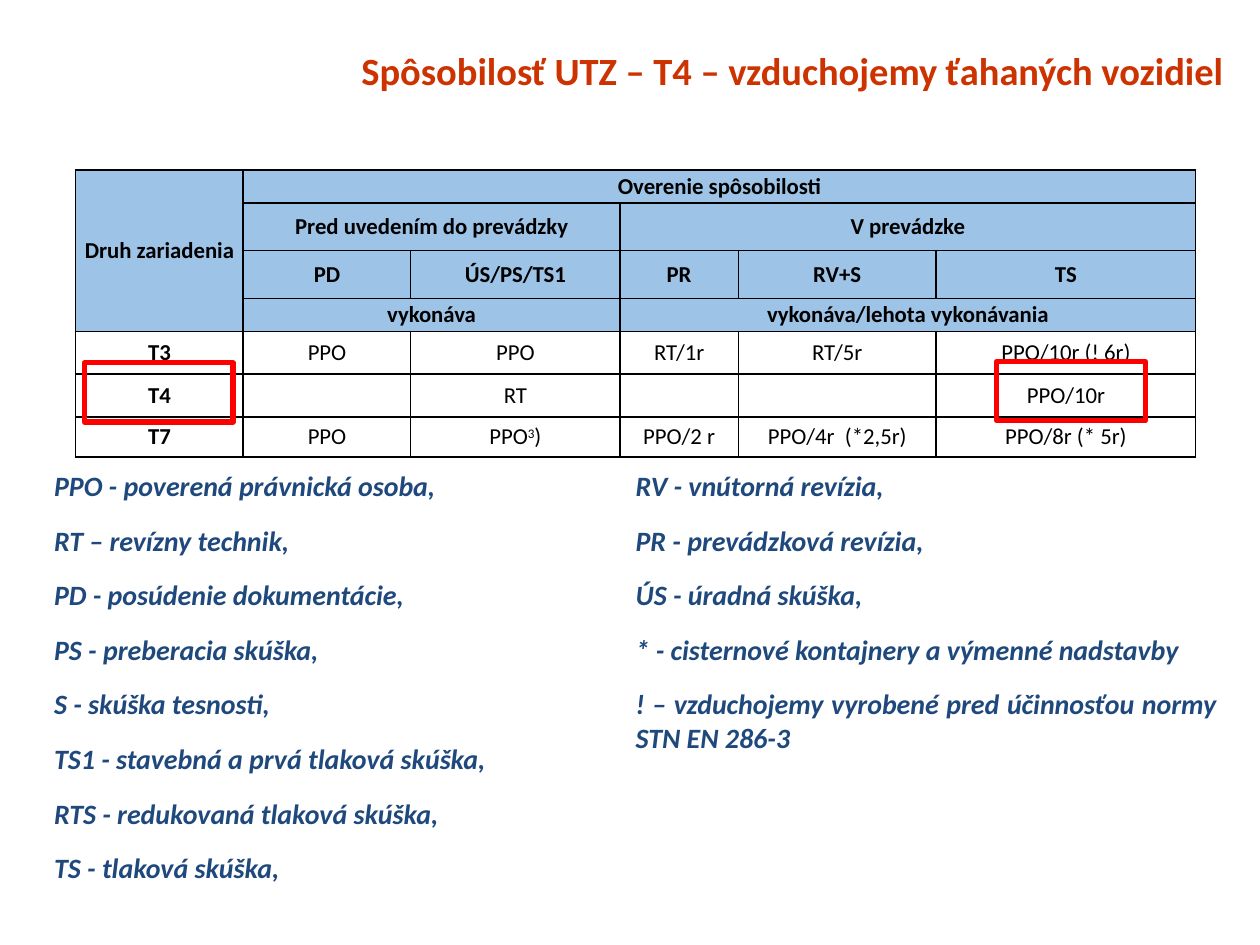
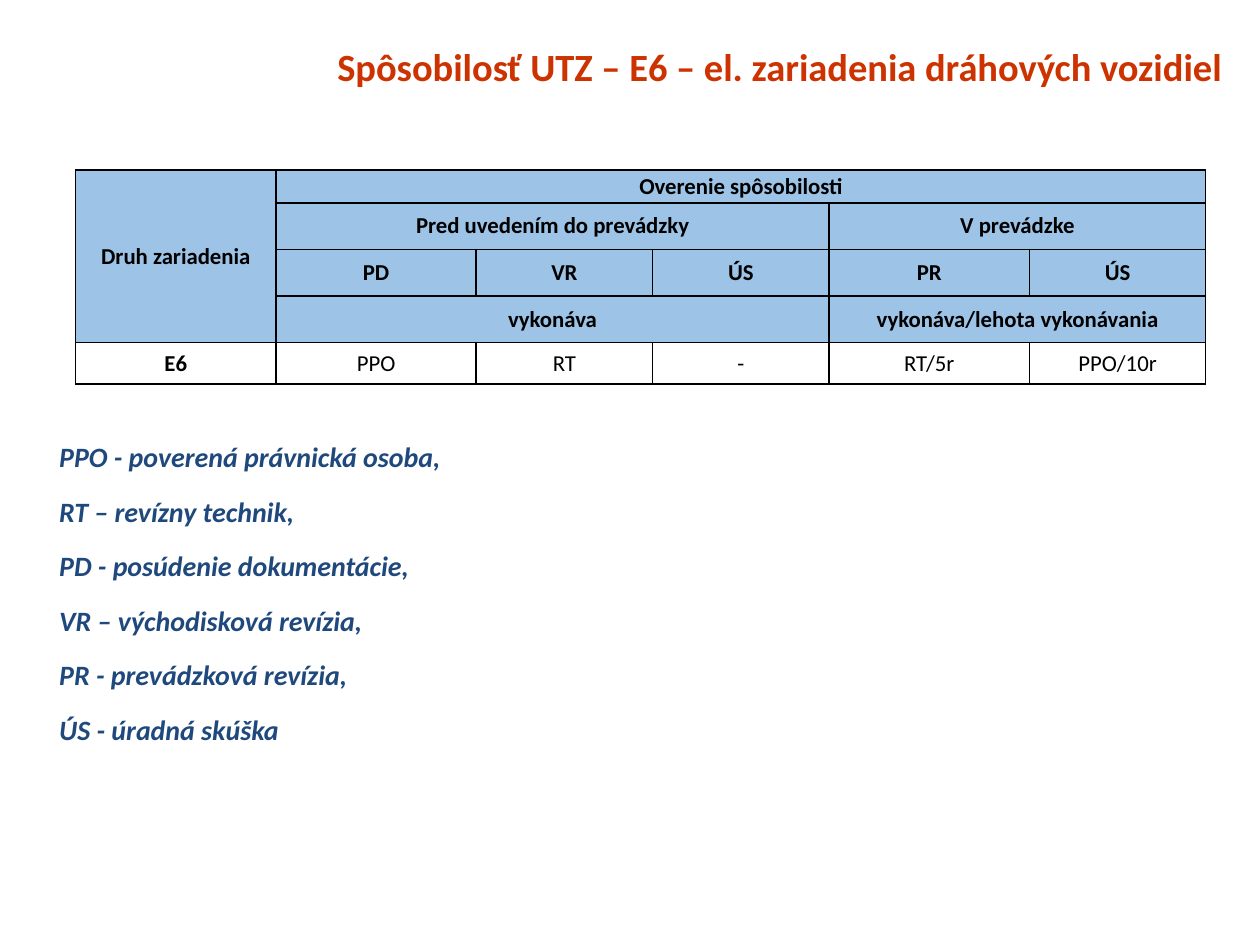
from lxml import etree
from pptx import Presentation
from pptx.dml.color import RGBColor
from pptx.enum.shapes import MSO_SHAPE
from pptx.enum.text import MSO_ANCHOR, MSO_AUTO_SIZE, PP_ALIGN
from pptx.oxml.ns import qn
from pptx.util import Inches, Pt

RECTANGLE = MSO_SHAPE.RECTANGLE
MIDDLE, TOP = MSO_ANCHOR.MIDDLE, MSO_ANCHOR.TOP
CENTER, RIGHT, JUSTIFY = PP_ALIGN.CENTER, PP_ALIGN.RIGHT, PP_ALIGN.JUSTIFY

FONT = "Calibri"
TITLE_RED = "CC3300"
LEGEND_BLUE = "1F497D"
HEADER_BLUE = "9DC3E6"
HIGHLIGHT_RED = "FF0000"
BLACK, WHITE = "000000", "FFFFFF"
TITLE_ONLY = 5
HEADER_ROWS = 4


def color(hex_value):
    return RGBColor.from_string(hex_value)


def write(frame, lines, size, hex_color, align, bold=False, italic=False,
          anchor=TOP, insets=(0.1, 0.05, 0.1, 0.05), space_after=0):
    """Fill a text frame or cell frame; text between ^ marks is superscript."""
    frame.word_wrap = True
    frame.vertical_anchor = anchor
    (frame.margin_left, frame.margin_top,
     frame.margin_right, frame.margin_bottom) = map(Inches, insets)
    for i, line in enumerate(lines):
        paragraph = frame.add_paragraph() if i else frame.paragraphs[0]
        paragraph.alignment = align
        paragraph.space_after = Pt(space_after)
        font = paragraph.font
        font.size = Pt(size)
        for j, piece in enumerate(line.split("^")):
            run = paragraph.add_run()
            run.text = piece
            run.font.name, run.font.size = FONT, Pt(size)
            run.font.bold, run.font.italic = bold, italic
            run.font.color.rgb = color(hex_color)
            if j % 2:
                run.font._element.set("baseline", "30000")


def add_title(slide, text, left, top, width, height=0.47):
    title = slide.shapes.title
    title.left, title.top = Inches(left), Inches(top)
    title.width, title.height = Inches(width), Inches(height)
    title.text_frame.auto_size = MSO_AUTO_SIZE.NONE
    write(title.text_frame, [text], 22, TITLE_RED, RIGHT, bold=True,
          anchor=MIDDLE, insets=(0.1, 0.05, 0.18, 0.05))


def add_borders(cell):
    properties = cell._tc.get_or_add_tcPr()
    for i, side in enumerate(("lnL", "lnR", "lnT", "lnB")):
        line = etree.Element(qn(f"a:{side}"), w=str(Pt(1)))
        fill = etree.SubElement(line, qn("a:solidFill"))
        etree.SubElement(fill, qn("a:srgbClr"), val=BLACK)
        properties.insert(i, line)


def add_verification_table(slide, left, top, widths, heights, before_count,
                           checks, devices):
    """Checks fill the columns; the first before_count precede operation."""
    table = slide.shapes.add_table(
        len(heights), len(widths), Inches(left), Inches(top),
        Inches(sum(widths)), Inches(sum(heights))).table
    table.first_row = table.horz_banding = False
    for column, width in zip(table.columns, widths):
        column.width = Inches(width)
    for row, height in zip(table.rows, heights):
        row.height = Inches(height)

    last = len(widths) - 1
    split = before_count + 1
    table.cell(0, 0).merge(table.cell(HEADER_ROWS - 1, 0))
    table.cell(0, 1).merge(table.cell(0, last))
    for r in (1, 3):
        table.cell(r, 1).merge(table.cell(r, before_count))
        table.cell(r, split).merge(table.cell(r, last))

    def group_row(before, during):
        return ["", before] + [""] * (before_count - 1) + [during] + [""] * (last - split)

    rows = [
        ["Druh zariadenia", "Overenie spôsobilosti"] + [""] * (last - 1),
        group_row("Pred uvedením do prevádzky", "V prevádzke"),
        [""] + checks,
        group_row("vykonáva", "vykonáva/lehota vykonávania"),
    ] + devices
    for r, texts in enumerate(rows):
        is_header = r < HEADER_ROWS
        for c, text in enumerate(texts):
            cell = table.cell(r, c)
            cell.fill.solid()
            cell.fill.fore_color.rgb = color(HEADER_BLUE if is_header else WHITE)
            add_borders(cell)
            cell.vertical_anchor = MIDDLE
            (cell.margin_left, cell.margin_top, cell.margin_right,
             cell.margin_bottom) = map(Inches, (0.03, 0.02, 0.03, 0.02))
            if text:
                write_cell(cell, text, is_header or c == 0)
            else:
                cell.text_frame.paragraphs[0].font.size = Pt(13)


def write_cell(cell, text, bold):
    write(cell.text_frame, [text], 13, BLACK, CENTER, bold=bold,
          anchor=MIDDLE, insets=(0.03, 0.02, 0.03, 0.02))


def add_legend(slide, lines, left, top, width=9.23, height=3.59):
    legend = slide.shapes.add_textbox(
        Inches(left), Inches(top), Inches(width), Inches(height))
    write(legend.text_frame, lines, 16, LEGEND_BLUE, JUSTIFY, bold=True,
          italic=True, insets=(0, 0.05, 0, 0.05), space_after=12)
    body = legend.text_frame._txBody.bodyPr
    body.set("numCol", "2")
    body.set("spcCol", "0")


def add_highlight(slide, left, top, width=1.18, height=0.47):
    frame = slide.shapes.add_shape(
        RECTANGLE, Inches(left), Inches(top), Inches(width), Inches(height))
    frame.shadow.inherit = False
    frame.fill.background()
    frame.line.color.rgb = color(HIGHLIGHT_RED)
    frame.line.width = Pt(3)


def add_air_tank_slide(prs):
    slide = prs.slides.add_slide(prs.slide_layouts[TITLE_ONLY])
    add_title(slide, "Spôsobilosť UTZ – T4 – vzduchojemy ťahaných vozidiel",
              2.09, 0.32, 7.8)
    add_verification_table(
        slide, 0.6, 1.35,
        widths=[1.33, 1.33, 1.66, 0.94, 1.57, 2.06],
        heights=[0.26, 0.38, 0.38, 0.26, 0.34, 0.34, 0.32],
        before_count=2,
        checks=["PD", "ÚS/PS/TS1", "PR", "RV+S", "TS"],
        devices=[
            ["T3", "PPO", "PPO", "RT/1r", "RT/5r", "PPO/10r (! 6r)"],
            ["T4", "", "RT", "", "", "PPO/10r"],
            ["T7", "PPO", "PPO^3^)", "PPO/2 r", "PPO/4r  (*2,5r)", "PPO/8r (* 5r)"],
        ])
    add_legend(slide, [
        "PPO - poverená právnická osoba,",
        "RT – revízny technik,",
        "PD - posúdenie dokumentácie,",
        "PS - preberacia skúška,",
        "S - skúška tesnosti,",
        "TS1 - stavebná a prvá tlaková skúška,",
        "RTS - redukovaná tlaková skúška,",
        "TS - tlaková skúška,",
        "RV - vnútorná revízia,",
        "PR - prevádzková revízia,",
        "ÚS - úradná skúška,",
        "* - cisternové kontajnery a výmenné nadstavby",
        "! – vzduchojemy vyrobené pred účinnosťou normy STN EN 286-3",
    ], 0.43, 3.67)
    add_highlight(slide, 0.67, 2.88)
    add_highlight(slide, 7.91, 2.87)


def add_electrical_slide(prs):
    slide = prs.slides.add_slide(prs.slide_layouts[TITLE_ONLY])
    add_title(slide, "Spôsobilosť UTZ – E6 – el. zariadenia dráhových vozidiel",
              2.48, 0.29, 7.4)
    add_verification_table(
        slide, 0.6, 1.35,
        widths=[1.59, 1.59, 1.4, 1.4, 1.59, 1.4],
        heights=[0.26, 0.37, 0.37, 0.37, 0.33],
        before_count=3,
        checks=["PD", "VR", "ÚS", "PR", "ÚS"],
        devices=[["E6", "PPO", "RT", "-", "RT/5r", "PPO/10r"]])
    add_legend(slide, [
        "PPO - poverená právnická osoba,",
        "RT – revízny technik,",
        "PD - posúdenie dokumentácie,",
        "VR – východisková revízia,",
        "PR - prevádzková revízia,",
        "ÚS - úradná skúška",
    ], 0.47, 3.44)


def main():
    prs = Presentation()
    prs.slide_width, prs.slide_height = Inches(10), Inches(7.5)
    add_air_tank_slide(prs)
    add_electrical_slide(prs)
    prs.save("out.pptx")


if __name__ == "__main__":
    main()
